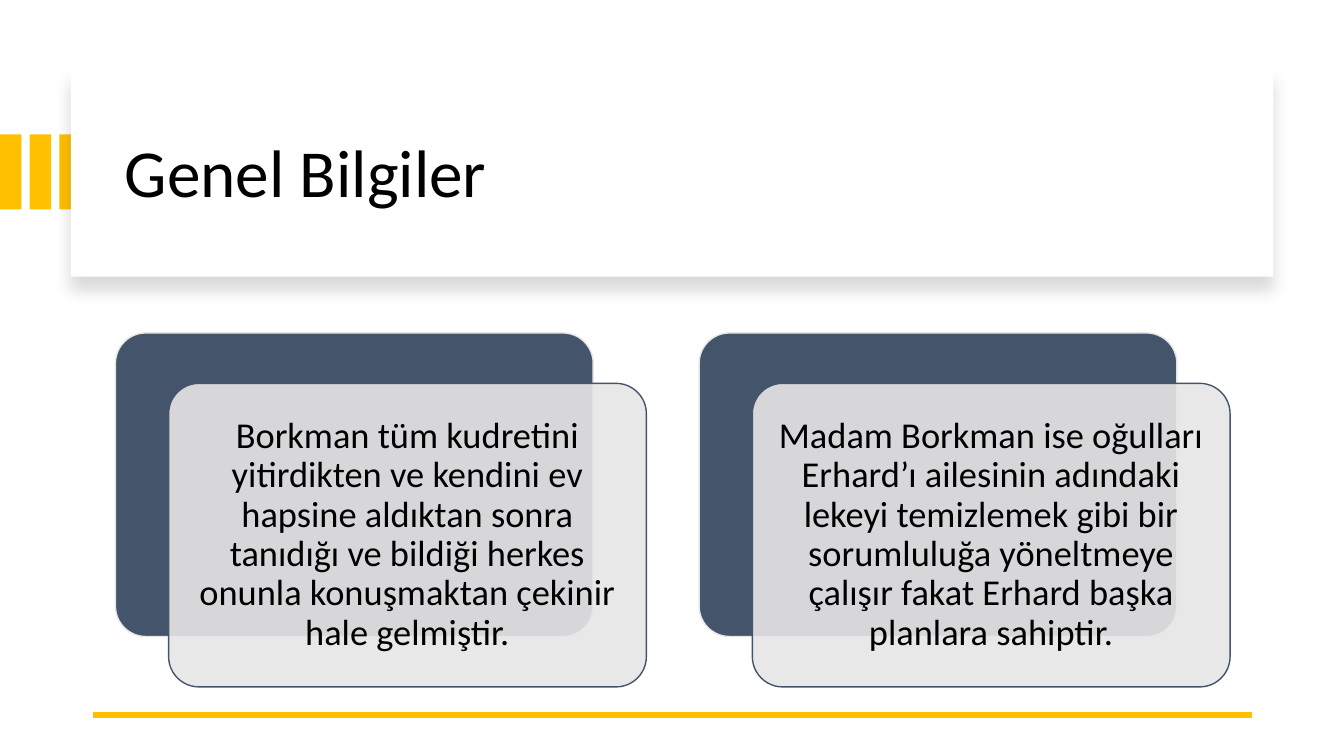
from lxml.etree import SubElement
from pptx import Presentation
from pptx.dml.color import RGBColor
from pptx.enum.shapes import MSO_CONNECTOR, MSO_SHAPE
from pptx.enum.text import MSO_ANCHOR, PP_ALIGN
from pptx.oxml.ns import qn
from pptx.util import Cm, Pt

COLORS = {
    "paper": "FFFFFF",
    "ink": "000000",
    "gold": "FFC000",
    "slate": "44546A",
    "mist": "E7E6E6",
}
TITLE = "Genel Bilgiler"
FACTS = [
    "Borkman tüm kudretini yitirdikten ve kendini ev hapsine aldıktan sonra "
    "tanıdığı ve bildiği herkes onunla konuşmaktan çekinir hale gelmiştir.",
    "Madam Borkman ise oğulları Erhard’ı ailesinin adındaki lekeyi temizlemek "
    "gibi bir sorumluluğa yöneltmeye çalışır fakat Erhard başka planlara sahiptir.",
]


def apply(target, **values):
    """Set each given attribute on the target."""
    for name, value in values.items():
        setattr(target, name, value)


def color(name):
    """Return a palette colour."""
    return RGBColor.from_string(COLORS[name])


class SlideBuilder:
    """Holds the text style and the current slide."""

    font = "Calibri"

    def __init__(self, slide):
        self.slide = slide

    def box(self, kind, left, top, width, height, fill, line=None):
        """Add a filled shape measured in centimetres."""
        shape = self.slide.shapes.add_shape(
            kind, Cm(left), Cm(top), Cm(width), Cm(height))
        shape.shadow.inherit = False
        shape.fill.solid()
        shape.fill.fore_color.rgb = color(fill)
        if line:
            shape.line.color.rgb = color(line)
            shape.line.width = Pt(1)
        else:
            shape.line.fill.background()
        return shape

    def label(self, shape, text, size, align, inset):
        """Put one styled paragraph into a shape."""
        frame = shape.text_frame
        frame.text = text
        apply(frame, word_wrap=True, vertical_anchor=MSO_ANCHOR.MIDDLE)
        for side in ("left", "top", "right", "bottom"):
            setattr(frame, f"margin_{side}", Cm(inset))
        paragraph = frame.paragraphs[0]
        apply(paragraph, alignment=align, line_spacing=0.9)
        apply(paragraph.runs[0].font, name=self.font, size=Pt(size))
        paragraph.runs[0].font.color.rgb = color("ink")

    def panel(self, left, top, width, height):
        """Add the white title panel with its soft shadow."""
        panel = self.box(MSO_SHAPE.RECTANGLE, left, top, width, height, "paper")
        effects = panel._element.spPr.find(qn("a:effectLst"))
        shadow = SubElement(effects, qn("a:outerShdw"), blurRad=str(Pt(11)),
                            dist=str(Pt(10)), dir="5400000", rotWithShape="0")
        tint = SubElement(shadow, qn("a:srgbClr"), val=COLORS["ink"])
        SubElement(tint, qn("a:alpha"), val="15000")

    def title(self, text, left, top, width, height):
        """Place the title in front of its panel."""
        title = self.slide.shapes.title
        apply(title, left=Cm(left), top=Cm(top), width=Cm(width), height=Cm(height))
        self.label(title, text, 48, PP_ALIGN.LEFT, 0.25)
        self.slide.shapes._spTree.append(title._element)

    def rule(self, left, right, y):
        """Add the gold rule at the foot."""
        rule = self.slide.shapes.add_connector(
            MSO_CONNECTOR.STRAIGHT, Cm(right), Cm(y), Cm(left), Cm(y))
        rule.line.color.rgb = color("gold")
        rule.line.width = Pt(4.5)
        SubElement(rule._element.spPr, qn("a:effectLst"))

    def card(self, text, left, top, width, height):
        """Add a dark backing and the translucent text card over it."""
        back = self.box(MSO_SHAPE.ROUNDED_RECTANGLE, left, top, width, height,
                        "slate", "mist")
        front = self.box(MSO_SHAPE.ROUNDED_RECTANGLE, left + 1.34, top + 1.27,
                         width, height, "mist", "slate")
        for layer in (back, front):
            layer.adjustments[0] = 0.1
        tint = front._element.spPr.find(qn("a:solidFill"))[0]
        SubElement(tint, qn("a:alpha"), val="90000")
        self.label(front, text, 26, PP_ALIGN.CENTER, 0.28)


def main():
    """Build and save the slide."""
    deck = Presentation()
    apply(deck, slide_width=Cm(33.87), slide_height=Cm(19.05))
    builder = SlideBuilder(deck.slides.add_slide(deck.slide_layouts[5]))
    for index in range(3):
        builder.box(MSO_SHAPE.RECTANGLE, index * 0.75, 3.39, 0.54, 1.89, "gold")
    builder.panel(1.79, 1.7, 30.3, 5.27)
    builder.title(TITLE, 2.9, 2.26, 28.27, 4.32)
    builder.rule(2.34, 31.55, 18.02)
    for index, fact in enumerate(FACTS):
        builder.card(fact, 2.91 + index * 14.71, 8.39, 12.04, 7.65)
    deck.save("out.pptx")


if __name__ == "__main__":
    main()
